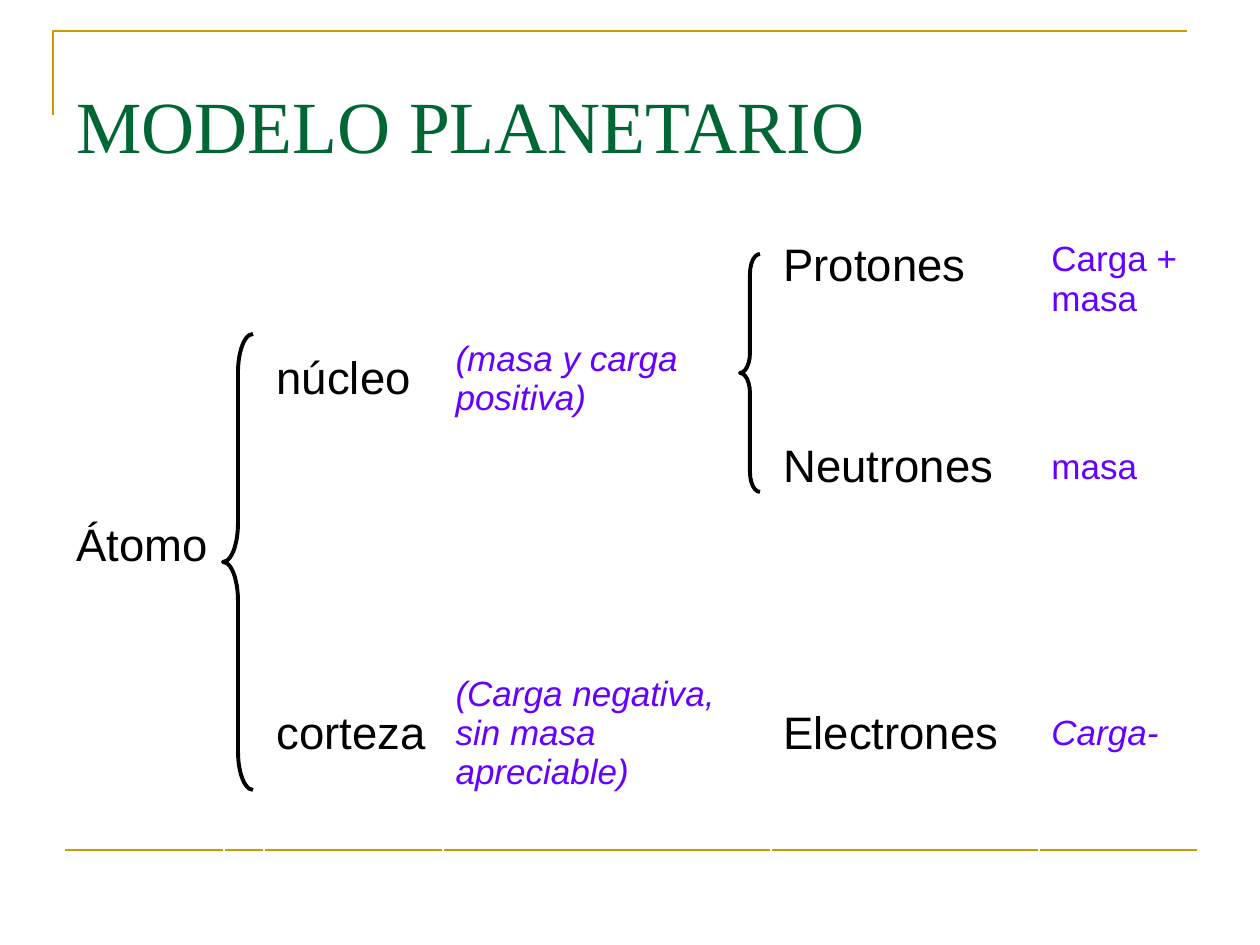
from lxml import etree
from pptx import Presentation
from pptx.dml.color import RGBColor
from pptx.enum.shapes import MSO_CONNECTOR as Connector, MSO_SHAPE as Shape
from pptx.enum.text import MSO_ANCHOR as Anchor
from pptx.oxml.ns import qn
from pptx.util import Pt

PX = 914400 // 126  # EMU in one px
GOLD, GREEN, BLACK, VIOLET = "CC9900", "006633", "000000", "6600FF"

COLUMNS = [160, 40, 179, 328, 268, 160]
ROWS = [86, 86, 79, 79, 79, 89, 79]
# (row, column): name of a part of the atom
PARTS = {
    (3, 0): "Átomo",
    (1, 2): "núcleo",
    (5, 2): "corteza",
    (0, 4): "Protones",
    (2, 4): "Neutrones",
    (5, 4): "Electrones",
}
# (row, column): property, italic
PROPERTIES = {
    (1, 3): ("(masa y carga positiva)", True),
    (5, 3): ("(Carga negativa, sin masa apreciable)", True),
    (0, 5): ("Carga + masa", False),
    (2, 5): ("masa", False),
    (5, 5): ("Carga-", True),
}


def px(*lengths):
    return [length * PX for length in lengths]


def color(hex_code):
    return RGBColor.from_string(hex_code)


def set_line(shape, hex_code, width):
    shape.line.color.rgb = color(hex_code)
    shape.line.width = Pt(width)


def write(frame, text, font_name, size, hex_code, italic=False):
    paragraph = frame.paragraphs[0]
    paragraph.text = text
    font = paragraph.font
    font.name, font.size, font.italic = font_name, Pt(size), italic
    font.color.rgb = color(hex_code)


def add_frame_lines(slide, left, top, width, height):
    """Gold corner at the top, gold rule at the bottom."""
    builder = slide.shapes.build_freeform(left, top + 84, scale=PX)
    builder.add_line_segments([(left, top), (left + width, top)], close=False)
    corner = builder.convert_to_shape()
    corner.shadow.inherit = False
    corner.fill.background()
    set_line(corner, GOLD, 1.5)

    rule_left, bottom = left + 10, top + height
    rule = slide.shapes.add_connector(
        Connector.STRAIGHT, *px(rule_left, bottom, rule_left + width, bottom))
    etree.SubElement(rule._element.spPr, qn("a:effectLst"))
    set_line(rule, GOLD, 1.5)


def add_title(slide, left, top, width, height):
    frame = slide.shapes.add_textbox(*px(left, top, width, height)).text_frame
    frame.word_wrap = True
    frame.margin_top = 14 * PX
    write(frame, "MODELO PLANETARIO", "Times New Roman", 42, GREEN)


def add_brace(slide, left, top, width, height, curve):
    brace = slide.shapes.add_shape(Shape.LEFT_BRACE, *px(left, top, width, height))
    brace.shadow.inherit = False
    brace.adjustments[0] = curve
    brace.fill.background()
    set_line(brace, BLACK, 2.25)


def add_atom_scheme(slide, left, top):
    """Table of parts and properties, with braces before the subdivisions."""
    table = slide.shapes.add_table(
        len(ROWS), len(COLUMNS), *px(left, top, sum(COLUMNS), sum(ROWS))).table
    table.first_row = table.horz_banding = False
    for column, width in zip(table.columns, COLUMNS):
        column.width = width * PX
    for row, height in zip(table.rows, ROWS):
        row.height = height * PX
    for cell in table.iter_cells():
        cell.fill.background()

    for (row, column), name in PARTS.items():
        write(table.cell(row, column).text_frame, name, "Arial", 26, BLACK)
    for (row, column), (text, italic) in PROPERTIES.items():
        write(table.cell(row, column).text_frame, text, "Arial", 20, VIOLET, italic)
    for row, column in [*PARTS, *PROPERTIES]:
        table.cell(row, column).vertical_anchor = Anchor.TOP if row == 0 else Anchor.MIDDLE

    add_brace(slide, left + 159, top + 100, 30, 456, 1.28)  # atom
    add_brace(slide, left + 676, top + 20, 20, 238, 1)  # nucleus


def main():
    deck = Presentation()
    deck.slide_width, deck.slide_height = px(1260, 945)
    slide = deck.slides.add_slide(deck.slide_layouts[6])
    add_frame_lines(slide, 53, 31, 1134, 819)
    add_title(slide, 64, 66, 1134, 158)
    add_atom_scheme(slide, 64, 234)
    deck.save("out.pptx")


if __name__ == "__main__":
    main()
